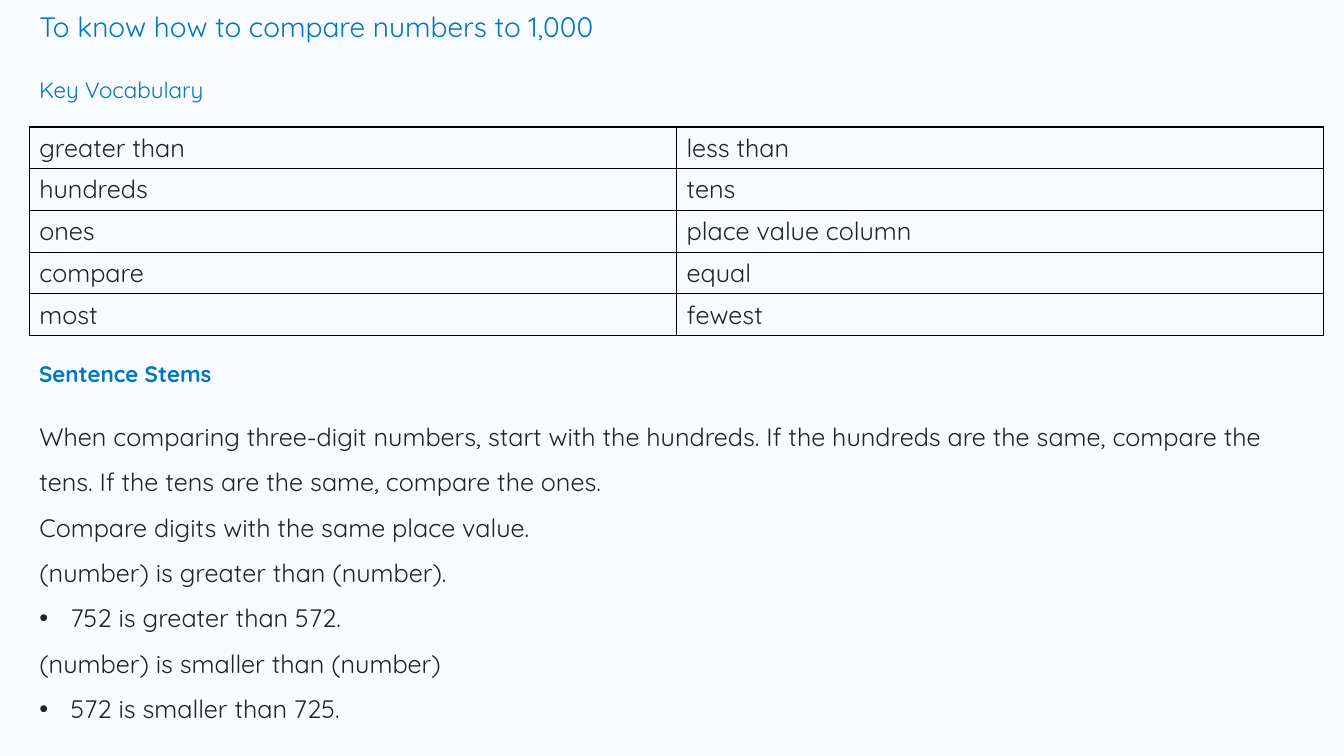
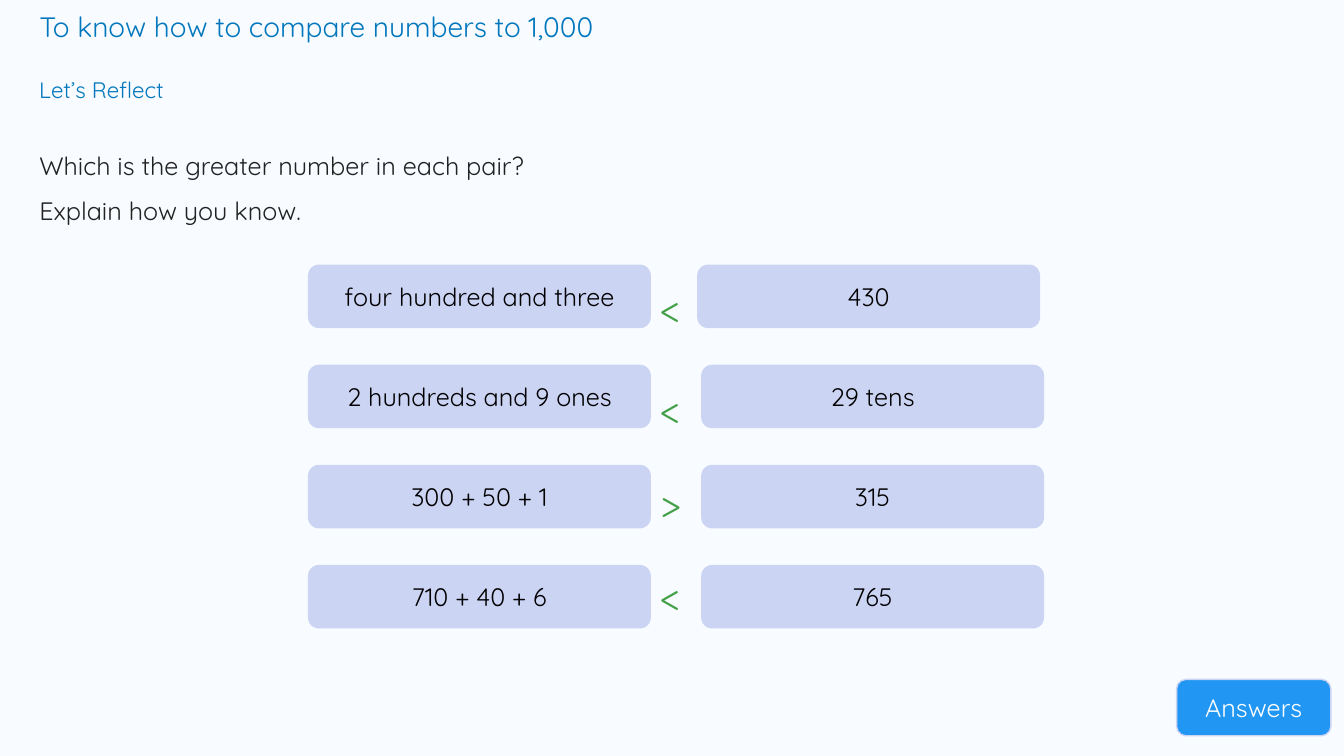
from lxml import etree
from pptx import Presentation
from pptx.dml.color import RGBColor
from pptx.enum.shapes import MSO_SHAPE
from pptx.enum.text import MSO_ANCHOR, MSO_AUTO_SIZE, PP_ALIGN
from pptx.oxml.ns import qn
from pptx.util import Inches, Pt

ROUNDED = MSO_SHAPE.ROUNDED_RECTANGLE
TOP, MIDDLE = MSO_ANCHOR.TOP, MSO_ANCHOR.MIDDLE
LEFT, CENTER = PP_ALIGN.LEFT, PP_ALIGN.CENTER
FIXED_SIZE = MSO_AUTO_SIZE.NONE

FONT = "Quicksand"
BACKGROUND = RGBColor(0xF8, 0xFB, 0xFF)
HEADING_BLUE = RGBColor(0x02, 0x77, 0xBD)
BUTTON_BLUE = RGBColor(0x21, 0x96, 0xF3)
CARD_BLUE = RGBColor(0xCC, 0xD4, 0xF4)
SIGN_GREEN = RGBColor(0x43, 0xA0, 0x47)
TEXT_GREY = RGBColor(0x22, 0x22, 0x22)
BLACK = RGBColor(0, 0, 0)
WHITE = RGBColor(0xFF, 0xFF, 0xFF)

TITLE_FORMAT = {"size": Pt(20), "color": HEADING_BLUE}
HEADING_FORMAT = {"size": Pt(16), "color": HEADING_BLUE}
BOLD_HEADING_FORMAT = {**HEADING_FORMAT, "bold": True}
BODY_FORMAT = {"size": Pt(18), "color": TEXT_GREY}
CARD_FORMAT = {"size": Pt(18), "color": BLACK}
BUTTON_FORMAT = {"size": Pt(18), "color": WHITE}
SIGN_FORMAT = {"size": Pt(28), "color": SIGN_GREEN}

TITLE = "To know how to compare numbers to 1,000"
VOCABULARY = [
    ("greater than", "less than"),
    ("hundreds", "tens"),
    ("ones", "place value column"),
    ("compare", "equal"),
    ("most", "fewest"),
]
SENTENCE_STEMS = [
    ("When comparing three-digit numbers, start with the hundreds. "
     "If the hundreds are the same, compare the tens. "
     "If the tens are the same, compare the ones.", False),
    ("Compare digits with the same place value.", False),
    ("(number) is greater than (number).", False),
    ("752 is greater than 572.", True),
    ("(number) is smaller than (number)", False),
    ("572 is smaller than 725.", True),
]
QUESTIONS = [
    ("Which is the greater number in each pair?", False),
    ("Explain how you know.", False),
]
PAIRS = [
    ("four hundred and three", "<", "430", 6.92, 2.71),
    ("2 hundreds and 9 ones", "<", "29 tens", 6.96, 3.71),
    ("300 + 50 + 1", ">", "315", 6.96, 4.64),
    ("710 + 40 + 6", "<", "765", 6.96, 5.57),
]

MARGIN = 0.29
CARD_LEFT, CARD_WIDTH, CARD_HEIGHT = 3.06, 3.39, 0.62
FIRST_CARD_TOP, LAST_CARD_TOP = 2.63, 5.61


def format_font(font, values):
    font.color.rgb = values["color"]
    for name, value in {"name": FONT, "bold": False, **values}.items():
        if name != "color":
            setattr(font, name, value)


def set_text(paragraph, text, values, align=LEFT):
    paragraph.alignment = align
    run = paragraph.add_run()
    run.text = text
    format_font(run.font, values)


def place(shape, left, top, width, height):
    box = {"left": left, "top": top, "width": width, "height": height}
    for name, value in box.items():
        setattr(shape, name, Inches(value))


def set_frame(shape, anchor=TOP, vertical_margin=0.05):
    values = {
        "word_wrap": True,
        "auto_size": FIXED_SIZE,
        "vertical_anchor": anchor,
        "margin_left": Inches(0.1),
        "margin_right": Inches(0.1),
        "margin_top": Inches(vertical_margin),
        "margin_bottom": Inches(vertical_margin),
    }
    for name, value in values.items():
        setattr(shape.text_frame, name, value)
    return shape.text_frame


def add_label(slide, text, values, box, vertical_margin=0.05):
    label = slide.shapes.add_textbox(*map(Inches, box))
    frame = set_frame(label, vertical_margin=vertical_margin)
    set_text(frame.paragraphs[0], text, values)


def add_heading(slide, text, top, values=HEADING_FORMAT):
    add_label(slide, text, values, (MARGIN, top, 2.97, 0.46))


def add_rounded_box(slide, text, values, box, fill, line_width, margin):
    shape = slide.shapes.add_shape(ROUNDED, *map(Inches, box))
    shape.shadow.inherit = False
    shape.fill.solid()
    shape.fill.fore_color.rgb = fill
    shape.line.color.rgb = CARD_BLUE
    shape.line.width = Pt(line_width)
    frame = set_frame(shape, MIDDLE, margin)
    set_text(frame.paragraphs[0], text, values, CENTER)


def set_bullet(paragraph, bulleted):
    properties = paragraph._p.get_or_add_pPr()
    indent = Inches(0.31) if bulleted else 0
    properties.set("marL", str(indent))
    properties.set("indent", str(-indent))
    if not bulleted:
        etree.SubElement(properties, qn("a:buNone"))
        return
    color = etree.SubElement(properties, qn("a:buClr"))
    etree.SubElement(color, qn("a:srgbClr"), val=str(TEXT_GREY))
    etree.SubElement(properties, qn("a:buFont"), typeface="Arial")
    etree.SubElement(properties, qn("a:buChar"), char="•")


def fill_body(slide, lines, box):
    body = slide.placeholders[1]
    place(body, *box)
    frame = set_frame(body)
    for index, (text, bulleted) in enumerate(lines):
        paragraph = frame.add_paragraph() if index else frame.paragraphs[0]
        set_bullet(paragraph, bulleted)
        paragraph.line_spacing = 1.5
        paragraph.space_before = Pt(0)
        set_text(paragraph, text, BODY_FORMAT)


def set_borders(cell):
    properties = cell._tc.get_or_add_tcPr()
    for side in ("a:lnL", "a:lnR", "a:lnT", "a:lnB"):
        line = etree.SubElement(properties, qn(side), w=str(Pt(1)))
        fill = etree.SubElement(line, qn("a:solidFill"))
        etree.SubElement(fill, qn("a:srgbClr"), val=str(BLACK))


def add_vocabulary_table(slide):
    box = map(Inches, (MARGIN, 1.26, 12.84, 2.02))
    table = slide.shapes.add_table(len(VOCABULARY), 2, *box).table
    table.first_row = False
    table.horz_banding = False
    for row, words in enumerate(VOCABULARY):
        for column, word in enumerate(words):
            cell = table.cell(row, column)
            set_borders(cell)
            cell.fill.background()
            set_text(cell.text_frame.paragraphs[0], word, BODY_FORMAT)


def add_lesson_slide(presentation, heading):
    slide = presentation.slides.add_slide(presentation.slide_layouts[1])
    place(slide.shapes.title, MARGIN, 0.04, 12.34, 0.44)
    frame = set_frame(slide.shapes.title)
    set_text(frame.paragraphs[0], TITLE, TITLE_FORMAT)
    add_heading(slide, heading, 0.71)
    return slide


def build_vocabulary_slide(presentation):
    slide = add_lesson_slide(presentation, "Key Vocabulary")
    add_vocabulary_table(slide)
    add_heading(slide, "Sentence Stems", 3.52, BOLD_HEADING_FORMAT)
    fill_body(slide, SENTENCE_STEMS, (MARGIN, 3.98, 12.83, 3.28))


def build_reflection_slide(presentation):
    slide = add_lesson_slide(presentation, "Let’s Reflect")
    fill_body(slide, QUESTIONS, (MARGIN, 1.29, 12.84, 1.38))
    add_rounded_box(slide, "Answers", BUTTON_FORMAT,
                    (11.67, 6.74, 1.53, 0.56), BUTTON_BLUE, 1, 0.05)
    pitch = (LAST_CARD_TOP - FIRST_CARD_TOP) / (len(PAIRS) - 1)
    for index, (first, sign, second, second_left, sign_top) in enumerate(PAIRS):
        top = FIRST_CARD_TOP + index * pitch
        for text, left in ((first, CARD_LEFT), (second, second_left)):
            add_rounded_box(slide, text, CARD_FORMAT,
                            (left, top, CARD_WIDTH, CARD_HEIGHT),
                            CARD_BLUE, 0.75, 0.1)
        add_label(slide, sign, SIGN_FORMAT,
                  (CARD_LEFT + CARD_WIDTH, sign_top, 0.64, 0.69), 0.1)


def main():
    presentation = Presentation()
    presentation.slide_width = Inches(13.33)
    presentation.slide_height = Inches(7.5)
    background = presentation.slide_master.background.fill
    background.solid()
    background.fore_color.rgb = BACKGROUND
    build_vocabulary_slide(presentation)
    build_reflection_slide(presentation)
    presentation.save("out.pptx")


if __name__ == "__main__":
    main()
